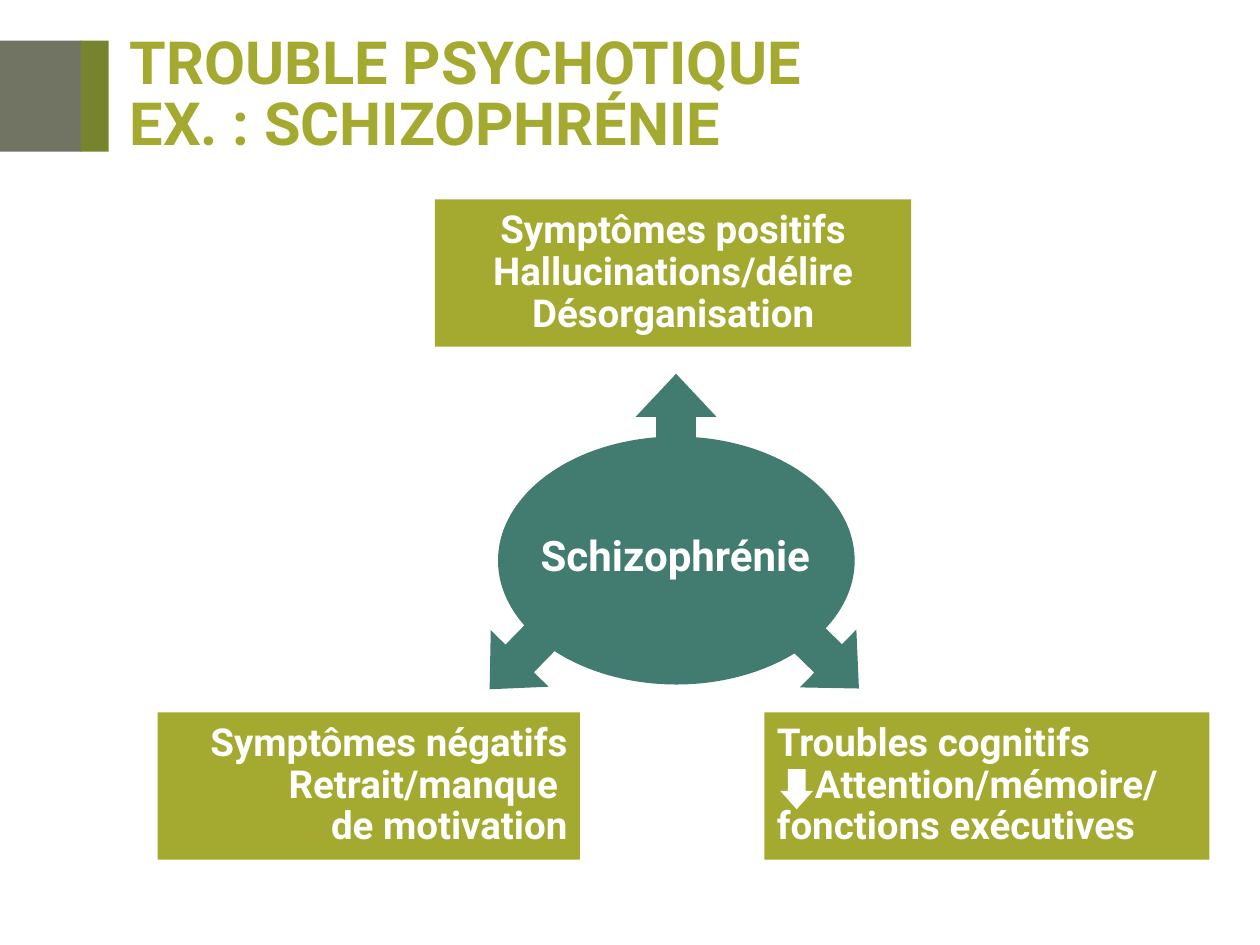
from lxml.etree import SubElement
from pptx import Presentation
from pptx.dml.color import RGBColor
from pptx.enum.shapes import MSO_SHAPE as SHAPE
from pptx.enum.text import MSO_ANCHOR as ANCHOR, PP_ALIGN as ALIGN
from pptx.oxml.ns import qn
from pptx.util import Cm, Pt

COLORS = {"dark": "252A10", "moss": "78832D", "olive": "A4AA2F",
          "teal": "427B6F", "white": "FFFFFF"}
FONT = {"name": "Roboto", "bold": True}


def rgb(name):
    return RGBColor.from_string(COLORS[name])


def add_shape(s, kind, box, color):
    sp = s.shapes.add_shape(kind, *map(Cm, box))
    sp.shadow.inherit = False
    sp.fill.solid()
    sp.fill.fore_color.rgb = rgb(color)
    sp.line.fill.background()
    return sp


def add_arrow(s, center, size, angle, adjustments, color):
    (cx, cy), (w, h) = center, size
    sp = add_shape(s, SHAPE.RIGHT_ARROW, (cx - w / 2, cy - h / 2, w, h), color)
    sp.rotation = angle
    for i, value in enumerate(adjustments):
        sp.adjustments[i] = value


def write(tf, lines, size, color, align, spacing=1.0):
    tf.vertical_anchor = ANCHOR.MIDDLE
    for i, line in enumerate(lines):
        p = tf.paragraphs[0] if i == 0 else tf.add_paragraph()
        p.text = line
        p.alignment = align
        p.line_spacing = spacing
        p.space_before = Pt(0)
        for r in p.runs:
            for key, value in {**FONT, "size": Pt(size)}.items():
                setattr(r.font, key, value)
            r.font.color.rgb = rgb(color)


def add_card(s, box, lines, align, margin=0.25):
    sp = add_shape(s, SHAPE.RECTANGLE, box, "olive")
    tf = sp.text_frame
    tf.word_wrap = True
    tf.margin_left = tf.margin_right = Cm(margin)
    write(tf, lines, 22, "white", align, 0.9)
    return tf


def add_header(s, x, y, w, h):
    # Side bars
    bar = add_shape(s, SHAPE.RECTANGLE, (x, y, 1.65, h), "dark")
    fill = bar.fill.fore_color._xFill.find(qn("a:srgbClr"))
    SubElement(fill, qn("a:alpha"), val="65000")
    add_shape(s, SHAPE.RECTANGLE, (x + 1.63, y, 0.56, h), "moss")
    # Title
    title = s.shapes.title
    title.left, title.top = Cm(x + 2.36), Cm(y - 0.18)
    title.width, title.height = Cm(w - 3), Cm(2.62)
    title.text_frame.word_wrap = True
    write(title.text_frame, ["TROUBLE PSYCHOTIQUE\vEX. : SCHIZOPHRÉNIE"],
          34, "olive", ALIGN.LEFT, 0.85)


def add_diagram(s, x, y, w, h):
    card_h = 2.97
    bottom = y + h - card_h
    # Symptom cards
    add_card(s, (x + 5.59, y, 9.6, card_h),
             ["Symptômes positifs", "Hallucinations/délire", "Désorganisation"],
             ALIGN.CENTER, 0)
    add_card(s, (x, bottom, 8.51, card_h),
             ["Symptômes négatifs", "Retrait/manque \vde motivation"], ALIGN.RIGHT)
    tf = add_card(s, (x + w - 8.97, bottom, 8.97, card_h),
                  ["Troubles cognitifs", "Attention/mémoire/", "fonctions exécutives"],
                  ALIGN.LEFT)
    # Indent that leaves room for the small down arrow
    pPr = tf.paragraphs[1]._p.get_or_add_pPr()
    pPr.set("marL", str(Cm(0.77)))
    pPr.set("indent", "0")
    add_arrow(s, (x + 12.88, bottom + 1.55), (0.81, 0.66), 90, (0.54, 0.56), "white")

    # Hub with its arrows
    for dx, dy, angle in ((10.45, 4.29, 270), (7.23, 9.32, 134.3), (13.58, 9.32, 44.3)):
        add_arrow(s, (x + dx, y + dy), (1.55, 1.63), angle, (0.49, 0.56), "teal")
    add_shape(s, SHAPE.OVAL, (x + 6.86, y + 4.78, 7.19, 5), "teal")
    label = s.shapes.add_textbox(*map(Cm, (x + 7.26, y + 6.53, 6.35, 1.27)))
    label.text_frame.word_wrap = False
    write(label.text_frame, ["Schizophrénie"], 24, "white", ALIGN.CENTER)


def main():
    prs = Presentation()
    prs.slide_width, prs.slide_height = Cm(25.4), Cm(19.05)
    s = prs.slides.add_slide(prs.slide_layouts[5])
    add_header(s, 0, 0.82, 25.4, 2.24)
    add_diagram(s, 3.18, 4.02, 21.2, 13.31)
    prs.save("out.pptx")


if __name__ == "__main__":
    main()
